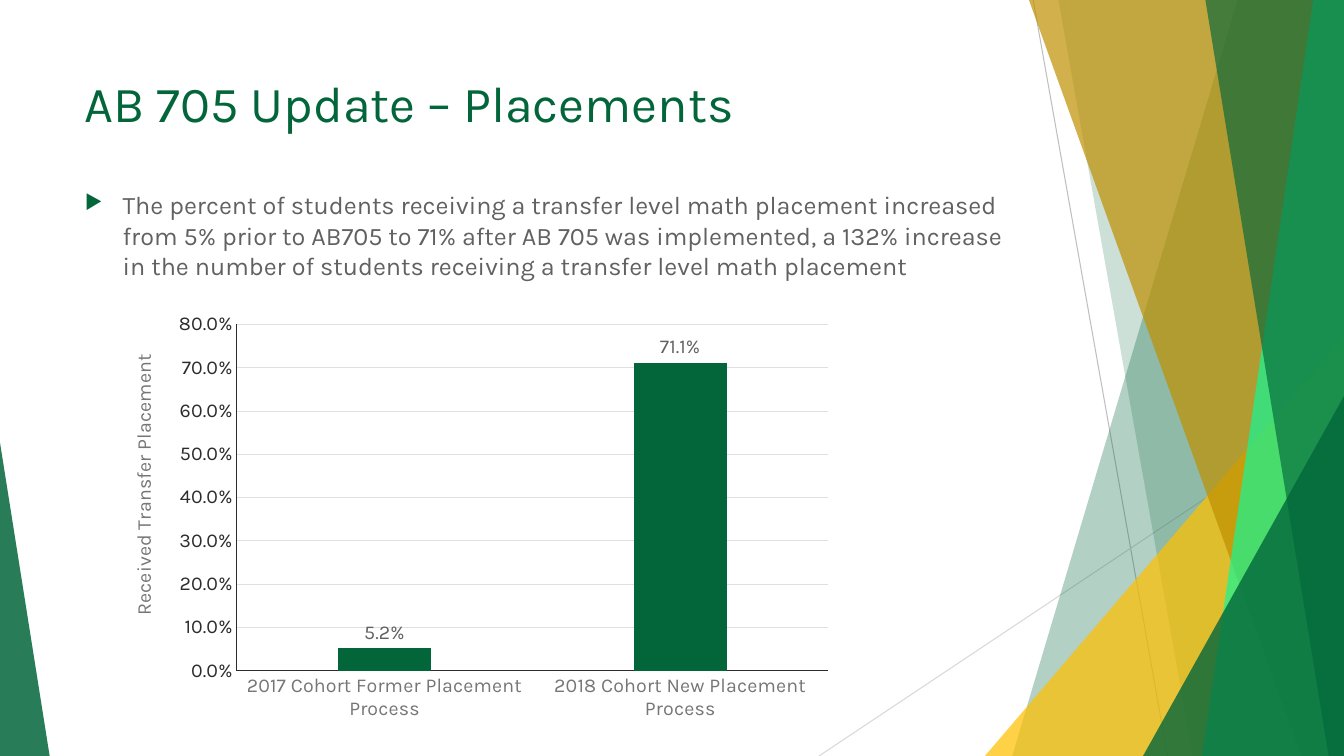
"""Build the AB 705 placements slide with its column chart and faceted border."""
from dataclasses import dataclass
from typing import Any

from lxml.etree import SubElement
from pptx import Presentation
from pptx.chart.data import CategoryChartData as ChartData
from pptx.dml.color import RGBColor as Colour
from pptx.enum.chart import XL_CHART_TYPE as ChartKind
from pptx.enum.chart import XL_LABEL_POSITION as LabelPlace
from pptx.enum.chart import XL_TICK_MARK as Tick
from pptx.enum.shapes import MSO_CONNECTOR as Connector
from pptx.enum.shapes import MSO_SHAPE as Preset
from pptx.enum.text import MSO_ANCHOR as Anchor
from pptx.oxml.ns import qn
from pptx.util import Pt


@dataclass(frozen=True)
class Theme:
    font: str = "Karla"
    green: str = "03663B"
    mint: str = "13F895"
    amber: str = "FFC000"
    ochre: str = "BF9000"
    body: str = "616161"
    muted: str = "767676"
    ink: str = "2C2C2C"
    grid: str = "DFDFDF"
    rule_dark: str = "BFBFBF"
    rule_light: str = "D9D9D9"
    title_size: float = 36
    body_size: float = 18
    chart_size: float = 14
    line_width: float = 0.75


@dataclass(frozen=True)
class Rule:
    start: tuple[float, float]
    end: tuple[float, float]
    colour: str


@dataclass(frozen=True)
class Facet:
    top_left: float
    bottom_left: float
    top_right: float
    colour: str
    opacity: int


@dataclass(frozen=True)
class Wedge:
    left: float
    top: float
    width: float
    apex: float
    colour: str
    opacity: int


THEME = Theme()
WIDTH, HEIGHT = 960, 540
RULES = [
    Rule((738, 0), (834, HEIGHT), THEME.rule_dark),
    Rule((WIDTH, 290), (585, HEIGHT), THEME.rule_light),
]
BORDER = [
    Facet(884, 723, WIDTH, THEME.green, 30),
    Facet(756, 852, WIDTH, THEME.green, 20),
    Wedge(703.5, 240, 256.5, 1, THEME.amber, 72),
    Facet(735, 929.5, WIDTH, THEME.ochre, 70),
    Facet(938, 858.5, WIDTH, THEME.mint, 70),
    Facet(861, 949, WIDTH, THEME.green, 65),
    Wedge(816.5, 283, 143.5, 1, THEME.green, 80),
    Wedge(0, 316, 35.5, 0, THEME.green, 85),
]
TITLE = "AB 705 Update – Placements"
FINDING = (
    "The percent of students receiving a transfer level math placement increased "
    "from 5% prior to AB705 to 71% after AB 705 was implemented, a 132% increase "
    "in the number of students receiving a transfer level math placement"
)
AXIS_TITLE = "Received Transfer Placement"
PLACEMENTS = {
    "2017 Cohort Former Placement Process": 0.052,
    "2018 Cohort New Placement Process": 0.711,
}


def apply(target: Any, values: dict[str, Any]) -> None:
    for name, value in values.items():
        setattr(target, name, value)


def style_font(font: Any, size: float, colour: str) -> None:
    apply(font, {"name": THEME.font, "size": Pt(size), "bold": False})
    font.color.rgb = Colour.from_string(colour)


def style_line(line: Any, colour: str) -> None:
    line.width = Pt(THEME.line_width)
    line.color.rgb = Colour.from_string(colour)


def add_rule(page: Any, rule: Rule) -> None:
    ends = [Pt(length) for length in (*rule.start, *rule.end)]
    connector = page.shapes.add_connector(Connector.STRAIGHT, *ends)
    style_line(connector.line, rule.colour)
    SubElement(connector._element.spPr, qn("a:effectLst"))


def add_border_piece(page: Any, piece: Facet | Wedge) -> None:
    if isinstance(piece, Facet):
        builder = page.shapes.build_freeform(Pt(piece.top_left), 0)
        corners = [(piece.top_right, 0), (WIDTH, HEIGHT), (piece.bottom_left, HEIGHT)]
        if piece.top_right < WIDTH:
            corners.insert(1, (WIDTH, 0))
        builder.add_line_segments([(Pt(x), Pt(y)) for x, y in corners])
        shape = builder.convert_to_shape()
    else:
        frame = (piece.left, piece.top, piece.width, HEIGHT - piece.top)
        shape = page.shapes.add_shape(Preset.ISOSCELES_TRIANGLE, *map(Pt, frame))
        shape.adjustments[0] = piece.apex
    shape.shadow.inherit = False
    shape.line.fill.background()
    shape.fill.solid()
    shape.fill.fore_color.rgb = Colour.from_string(piece.colour)
    colour = shape._element.spPr.find(f"{qn('a:solidFill')}/{qn('a:srgbClr')}")
    SubElement(colour, qn("a:alpha"), val=str(piece.opacity * 1000))


def add_bullet(para: Any) -> None:
    properties = para._p.get_or_add_pPr()
    properties.set("marL", str(Pt(27)))
    properties.set("indent", str(Pt(-27)))
    colour = SubElement(properties, qn("a:buClr"))
    SubElement(colour, qn("a:srgbClr"), val=THEME.green)
    SubElement(properties, qn("a:buSzPct"), val="80000")
    SubElement(properties, qn("a:buChar"), char="▶")


def add_text(page: Any, text: str, top: float, height: float, size: float,
             colour: str, bulleted: bool = False) -> None:
    box = page.shapes.add_textbox(Pt(53.5), Pt(top), Pt(677), Pt(height))
    apply(box.text_frame, {"word_wrap": True, "vertical_anchor": Anchor.TOP})
    para = box.text_frame.paragraphs[0]
    if bulleted:
        add_bullet(para)
    span = para.add_run()
    span.text = text
    style_font(span.font, size, colour)


def place(element: Any, position: int, values: dict[str, Any]) -> None:
    for old in element.findall(qn("c:layout")):
        element.remove(old)
    layout = SubElement(element, qn("c:layout"))
    manual = SubElement(layout, qn("c:manualLayout"))
    for name, value in values.items():
        SubElement(manual, qn(f"c:{name}"), val=str(value))
    element.insert(position, layout)


def add_placement_chart(page: Any) -> None:
    data = ChartData(number_format="0.0%")
    data.categories = list(PLACEMENTS)
    data.add_series("Received Transfer Placement", list(PLACEMENTS.values()))
    frame = map(Pt, (80.5, 216.5, 521.5, 305.5))
    chart = page.shapes.add_chart(ChartKind.COLUMN_CLUSTERED, *frame, data).chart
    apply(chart, {"has_legend": False, "has_title": False})
    style_font(chart.font, THEME.chart_size, THEME.ink)

    plot = chart.plots[0]
    apply(plot, {"gap_width": 219, "overlap": -27, "vary_by_categories": False,
                 "has_data_labels": True})
    apply(plot.data_labels, {"show_value": True, "number_format": "0.0%",
                             "number_format_is_linked": False,
                             "position": LabelPlace.OUTSIDE_END})
    style_font(plot.data_labels.font, THEME.chart_size, THEME.body)
    bars = plot.series[0].format.fill
    bars.solid()
    bars.fore_color.rgb = Colour.from_string(THEME.green)

    amounts, cohorts = chart.value_axis, chart.category_axis
    for axis, colour in ((amounts, THEME.ink), (cohorts, THEME.muted)):
        apply(axis, {"major_tick_mark": Tick.NONE, "minor_tick_mark": Tick.NONE})
        style_font(axis.tick_labels.font, THEME.chart_size, colour)
        style_line(axis.format.line, THEME.ink)
    apply(amounts, {"minimum_scale": 0, "maximum_scale": 0.8, "major_unit": 0.1,
                    "has_major_gridlines": True})
    apply(amounts.tick_labels, {"number_format": "0.0%", "number_format_is_linked": False})
    style_line(amounts.major_gridlines.format.line, THEME.grid)

    para = amounts.axis_title.text_frame.paragraphs[0]
    span = para.add_run()
    span.text = AXIS_TITLE
    style_font(span.font, THEME.chart_size, THEME.muted)
    body = amounts.axis_title.text_frame._txBody
    apply_rotation = {"rot": "-5400000", "vert": "horz"}
    for name, value in apply_rotation.items():
        body.bodyPr.set(name, value)
    corner = {"xMode": "edge", "yMode": "edge"}
    place(amounts.axis_title._element, 1, {**corner, "x": 0.02, "y": 0.11})
    area = chart._chartSpace.chart.plotArea
    place(area, 0, {"layoutTarget": "inner", **corner,
                    "x": 0.17, "y": 0.05, "w": 0.81, "h": 0.81})


def main() -> None:
    deck = Presentation()
    apply(deck, {"slide_width": Pt(WIDTH), "slide_height": Pt(HEIGHT)})
    page = deck.slides.add_slide(deck.slide_layouts[6])
    for rule in RULES:
        add_rule(page, rule)
    for piece in BORDER:
        add_border_piece(page, piece)
    add_text(page, TITLE, 48, 104, THEME.title_size, THEME.green)
    add_text(page, FINDING, 132, 305, THEME.body_size, THEME.body, bulleted=True)
    add_placement_chart(page)
    deck.save("out.pptx")


if __name__ == "__main__":
    main()
